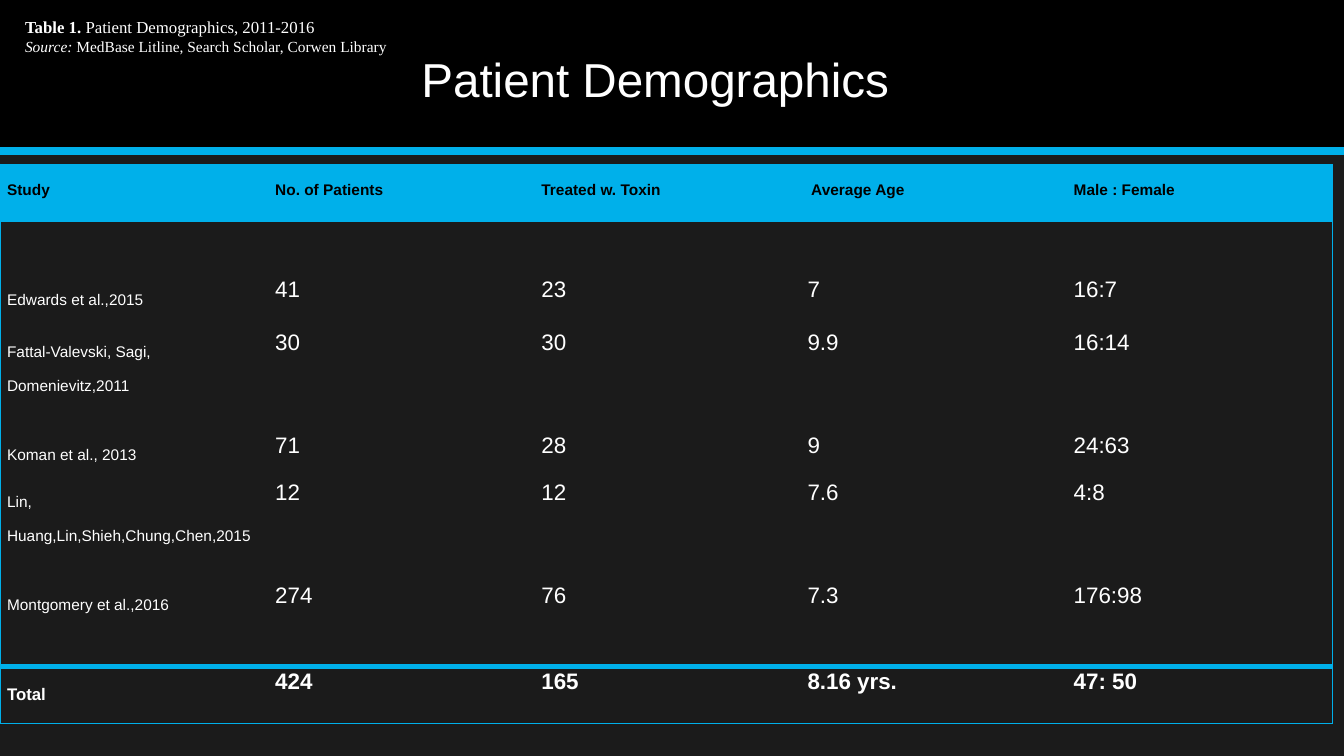
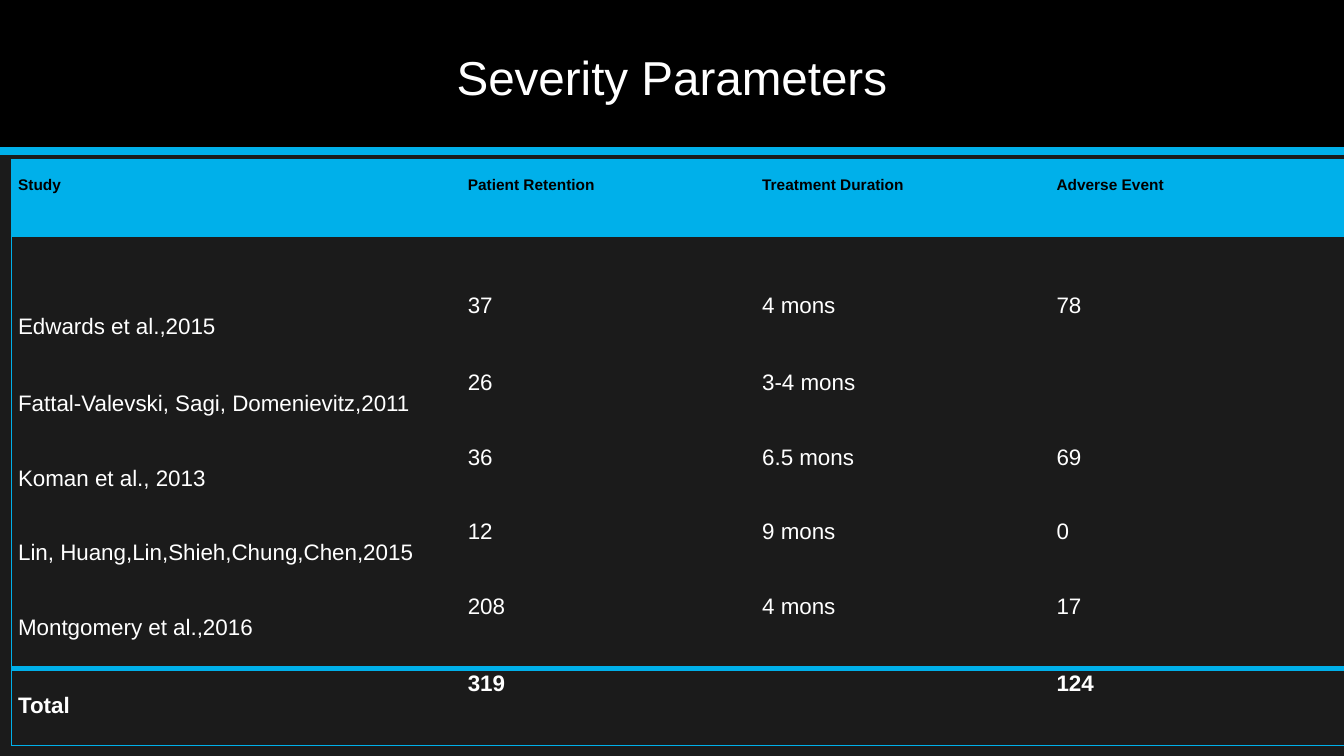
from lxml.etree import SubElement
from pptx import Presentation
from pptx.dml.color import RGBColor
from pptx.enum.shapes import MSO_CONNECTOR, MSO_SHAPE
from pptx.enum.text import MSO_ANCHOR, PP_ALIGN
from pptx.oxml.ns import qn
from pptx.util import Inches, Pt

COLORS = {"background": "1B1B1B", "band": "000000", "accent": "00B0EA",
          "text": "FFFFFF", "header": "000000"}
FONT, CAPTION_FONT = "Arial", "Times New Roman"
SLIDE_WIDTH, SLIDE_HEIGHT, BAND_HEIGHT = 13.33, 7.5, 1.5
NO_STYLE_NO_GRID = "{2D5ABB26-0587-4C30-8999-92F81FD0307C}"
THIN, THICK = 0.5, 4

CAPTION = [
    ("Table 1.", " Patient Demographics, 2011-2016", 12, "bold"),
    ("Source:", " MedBase Litline, Search Scholar, Corwen Library", 11, "italic"),
]
STUDIES = ["Edwards et al.,2015", "Fattal-Valevski, Sagi, Domenievitz,2011",
           "Koman et al., 2013", "Lin, Huang,Lin,Shieh,Chung,Chen,2015",
           "Montgomery et al.,2016"]
SLIDES = [
    {
        "title": "Patient Demographics",
        "title_box": (1, 0.21, 11, 1.2),
        "caption": CAPTION,
        "corner": (0, 1.63),
        "columns": [2.66] + [2.64] * 4,
        "rows": [0.57, 0.52, 0.52, 1.02, 0.47, 1.02, 0.86, 0.57],
        "study_size": 11,
        "total_size": 12,
        "header": ["No. of Patients", "Treated w. Toxin", " Average Age", "Male : Female"],
        "values": [["41", "23", "7", "16:7"],
                   ["30", "30", "9.9", "16:14"],
                   ["71", "28", "9", "24:63"],
                   ["12", "12", "7.6", "4:8"],
                   ["274", "76", "7.3", "176:98"]],
        "total": ["424", "165", "8.16 yrs.", "47: 50"],
    },
    {
        "title": "Severity Parameters",
        "title_box": (0, 0, SLIDE_WIDTH, 1.58),
        "caption": [],
        "corner": (0.11, 1.58),
        "columns": [4.46] + [2.92] * 3,
        "rows": [0.77, 0.52, 0.77, 0.74, 0.74, 0.74, 0.77, 0.77],
        "study_size": 16,
        "total_size": 16,
        "header": ["Patient Retention", "Treatment Duration", "Adverse Event"],
        "values": [["37", "4 mons", "78"],
                   ["26", "3-4 mons", ""],
                   ["36", "6.5 mons", "69"],
                   ["12", "9 mons", "0"],
                   ["208", "4 mons", "17"]],
        "total": ["319", "", "124"],
    },
]


def rgb(name):
    return RGBColor.from_string(COLORS[name])


def format_font(font, size, color="text", name=FONT, bold=False):
    font.name, font.size, font.bold = name, Pt(size), bold
    font.color.rgb = rgb(color)


def decorate_master(master, slide):
    master.background.fill.solid()
    master.background.fill.fore_color.rgb = rgb("background")
    band = slide.shapes.add_shape(MSO_SHAPE.RECTANGLE, 0, 0,
                                  Inches(SLIDE_WIDTH), Inches(BAND_HEIGHT))
    band.shadow.inherit = False
    band.fill.solid()
    band.fill.fore_color.rgb = rgb("band")
    band.line.fill.background()
    rule = slide.shapes.add_connector(MSO_CONNECTOR.STRAIGHT, 0, Inches(BAND_HEIGHT),
                                      Inches(SLIDE_WIDTH), Inches(BAND_HEIGHT))
    rule.line.color.rgb = rgb("accent")
    rule.line.width = Pt(6)
    SubElement(rule._element.spPr, qn("a:effectLst"))
    for position, shape in enumerate((band, rule), start=2):
        master.shapes._spTree.insert(position, shape._element)


def add_title(slide, text, box):
    title = slide.shapes.title
    title.left, title.top, title.width, title.height = map(Inches, box)
    title.text_frame.text = text
    title.text_frame.vertical_anchor = MSO_ANCHOR.MIDDLE
    paragraph = title.text_frame.paragraphs[0]
    paragraph.alignment = PP_ALIGN.CENTER
    paragraph.line_spacing = 0.9
    format_font(paragraph.font, 34)


def add_caption(slide, lines):
    box = slide.shapes.add_textbox(Inches(0.15), Inches(0.11), Inches(4.32), Inches(0.49))
    frame = box.text_frame
    frame.word_wrap = True
    frame.vertical_anchor = MSO_ANCHOR.MIDDLE
    for index, (label, text, size, emphasis) in enumerate(lines):
        paragraph = frame.add_paragraph() if index else frame.paragraphs[0]
        format_font(paragraph.font, size, name=CAPTION_FONT)
        label_run = paragraph.add_run()
        label_run.text = label
        setattr(label_run.font, emphasis, True)
        paragraph.add_run().text = text


def add_border(cell, side, width):
    line = SubElement(cell._tc.get_or_add_tcPr(), qn(f"a:ln{side}"), w=str(Pt(width)))
    fill = SubElement(line, qn("a:solidFill"))
    SubElement(fill, qn("a:srgbClr"), val=COLORS["accent"])


def format_cell(cell, row, column, last_row, last_column, content):
    borders = {
        "L": THIN if column == 0 else 0,
        "R": THIN if column == last_column else 0,
        "T": {0: THIN, last_row: THICK}.get(row, 0),
        "B": {last_row: THIN, last_row - 1: THICK}.get(row, 0),
    }
    for side, width in borders.items():
        if width:
            add_border(cell, side, width)
    if row == 0:
        cell.fill.solid()
        cell.fill.fore_color.rgb = rgb("accent")
    else:
        cell.fill.background()
    cell.margin_left = cell.margin_right = Inches(0.07)
    cell.margin_top = cell.margin_bottom = 0
    paragraph = cell.text_frame.paragraphs[0]
    if row == 0 or column == 0:
        paragraph.line_spacing = 2.0
    else:
        paragraph.line_spacing = 1.15
        paragraph.space_after = Pt(10)
    if row == 0:
        size = 11
    elif column == 0:
        size = content["total_size" if row == last_row else "study_size"]
    else:
        size = 16
    format_font(paragraph.font, size, "text" if row else "header", bold=row in (0, last_row))


def add_study_table(slide, content):
    columns, rows = content["columns"], content["rows"]
    texts = [["Study"] + content["header"], [""] * len(columns)]
    texts += [[study] + values for study, values in zip(STUDIES, content["values"])]
    texts.append(["Total"] + content["total"])
    left, top = content["corner"]
    table = slide.shapes.add_table(len(rows), len(columns), Inches(left), Inches(top),
                                   Inches(sum(columns)), Inches(sum(rows))).table
    table.first_row = table.horz_banding = False
    table._tbl.tblPr.find(qn("a:tableStyleId")).text = NO_STYLE_NO_GRID
    for column, width in zip(table.columns, columns):
        column.width = Inches(width)
    for row, height in zip(table.rows, rows):
        row.height = Inches(height)
    for row, row_texts in enumerate(texts):
        for column, text in enumerate(row_texts):
            cell = table.cell(row, column)
            cell.text = text
            format_cell(cell, row, column, len(rows) - 1, len(columns) - 1, content)


def main():
    presentation = Presentation()
    presentation.slide_width = Inches(SLIDE_WIDTH)
    presentation.slide_height = Inches(SLIDE_HEIGHT)
    for index, content in enumerate(SLIDES):
        slide = presentation.slides.add_slide(presentation.slide_layouts.get_by_name("Title Only"))
        if index == 0:
            decorate_master(presentation.slide_master, slide)
        add_title(slide, content["title"], content["title_box"])
        add_study_table(slide, content)
        if content["caption"]:
            add_caption(slide, content["caption"])
    presentation.save("out.pptx")


if __name__ == "__main__":
    main()
